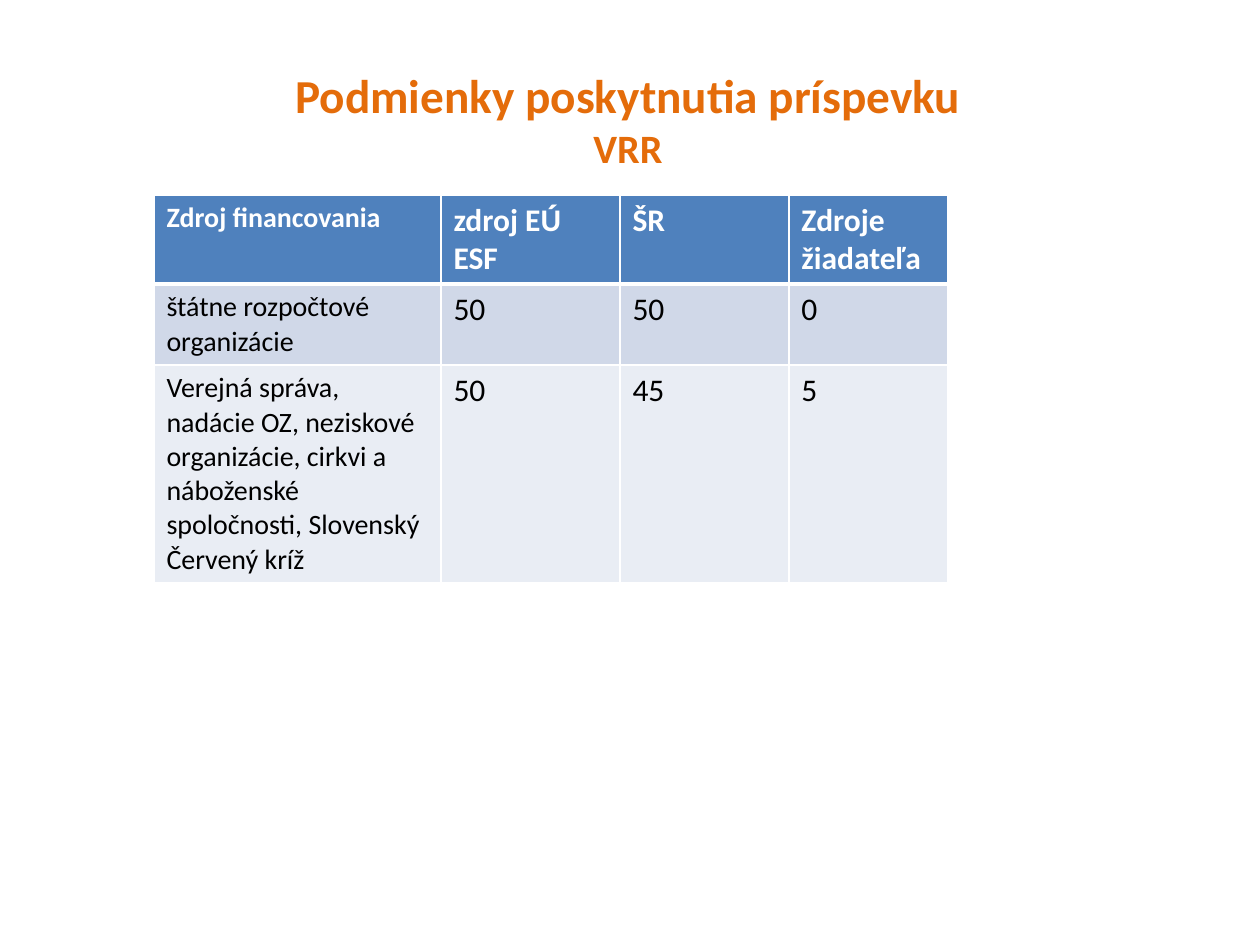
from typing import NamedTuple

from lxml.etree import SubElement
from pptx import Presentation
from pptx.dml.color import RGBColor as Rgb
from pptx.enum.text import PP_ALIGN as Align
from pptx.oxml.ns import qn
from pptx.util import Pt

PX = 914400 // 126
FONT = "Calibri"
ORANGE, WHITE, BLACK = "E46C0A", "FFFFFF", "000000"


class Row(NamedTuple):
    height: int
    fill: str
    ink: str
    bold: bool
    top: int
    base: int
    texts: tuple[str, ...]


COLS = (287, 179, 169, 159)
ROWS = (
    Row(89, "4F81BD", WHITE, True, 1, 3,
        ("Zdroj financovania", "zdroj EÚ ESF", "ŠR", "Zdroje žiadateľa")),
    Row(81, "D0D8E8", BLACK, False, 3, 1,
        ("štátne rozpočtové organizácie", "50", "50", "0")),
    Row(218, "E9EDF4", BLACK, False, 1, 1,
        ("Verejná správa, nadácie OZ, neziskové organizácie, cirkvi a "
         "náboženské spoločnosti, Slovenský Červený kríž", "50", "45", "5")),
)


def px(n: int) -> int:
    return n * PX


def color(code: str) -> Rgb:
    return Rgb.from_string(code)


def style(para, size: int, ink: str, bold: bool) -> None:
    for run in para.runs:
        font = run.font
        font.name, font.size, font.bold = FONT, Pt(size), bold
        font.color.rgb = color(ink)


def border(cell, side: str, width: int) -> None:
    props = cell._tc.get_or_add_tcPr()
    line = SubElement(props, qn(f"a:ln{side}"), w=str(Pt(width)))
    fill = SubElement(line, qn("a:solidFill"))
    SubElement(fill, qn("a:srgbClr"), val=WHITE)


def draw_title(slide) -> None:
    box = slide.shapes.add_textbox(px(64), px(60), px(1128), px(672))
    frame = box.text_frame
    frame.word_wrap = True
    frame.text = "Podmienky poskytnutia príspevku\nVRR"
    for para, size in zip(frame.paragraphs, (27, 23)):
        para.alignment = Align.CENTER
        style(para, size, ORANGE, True)


def draw_table(slide) -> None:
    height = sum(row.height for row in ROWS)
    table = slide.shapes.add_table(len(ROWS), len(COLS), px(154), px(195),
                                   px(sum(COLS)), px(height)).table
    for col, width in zip(table.columns, COLS):
        col.width = px(width)
    for r, row in enumerate(ROWS):
        table.rows[r].height = px(row.height)
        for c, text in enumerate(row.texts):
            cell = table.cell(r, c)
            cell.text_frame.text = text
            style(cell.text_frame.paragraphs[0], 18 if c else 16,
                  row.ink, row.bold)
            # Borders come before the fill in the cell properties
            for side, width in zip("LRTB", (1, 1, row.top, row.base)):
                border(cell, side, width)
            cell.fill.solid()
            cell.fill.fore_color.rgb = color(row.fill)


def main() -> None:
    deck = Presentation()
    deck.slide_width, deck.slide_height = px(1260), px(945)
    slide = deck.slides.add_slide(deck.slide_layouts[6])
    draw_title(slide)
    draw_table(slide)
    deck.save("out.pptx")


if __name__ == "__main__":
    main()
